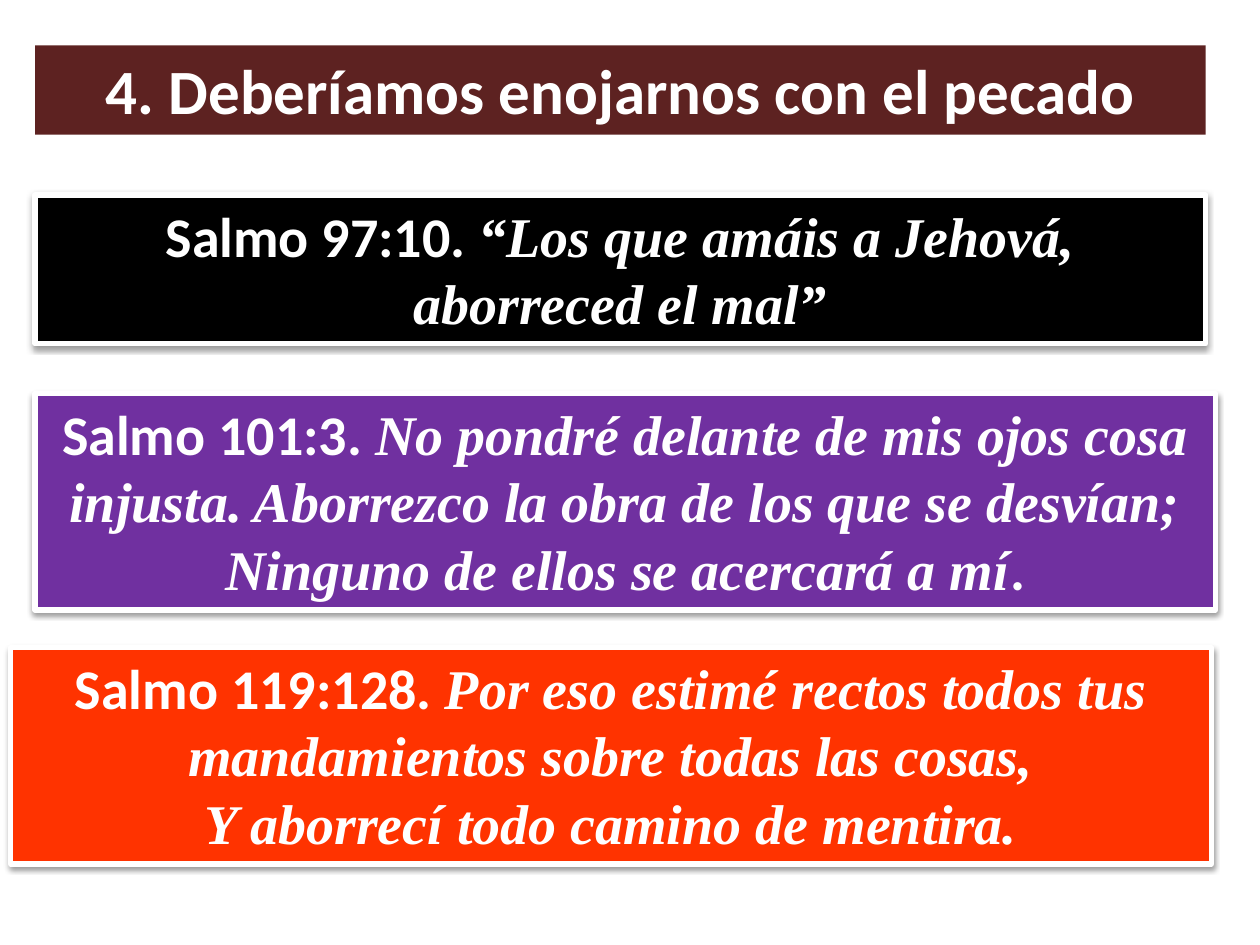
from dataclasses import dataclass

from lxml import etree
from pptx import Presentation
from pptx.dml.color import RGBColor
from pptx.enum import shapes, text
from pptx.oxml import ns
from pptx.util import Pt


@dataclass(frozen=True)
class Theme:
    white: str = "FFFFFF"
    black: str = "000000"
    maroon: str = "5D2221"
    purple: str = "7030A0"
    orange: str = "FF3300"
    label_font: str = "Calibri"
    verse_font: str = "Times New Roman"
    title_size: int = 36
    verse_size: int = 32
    border: int = 3


THEME = Theme()


def add_text(p, content, font=THEME.label_font, size=THEME.verse_size,
             color=THEME.white, bold=True, italic=False):
    r = p.add_run()
    r.text = content
    r.font.name = font
    r.font.size = Pt(size)
    r.font.bold = bold
    r.font.italic = italic
    r.font.color.rgb = RGBColor.from_string(color)


def add_shadow(sp):
    """Give the shape a soft shadow that falls straight down."""
    effects = sp.element.spPr.find(ns.qn("a:effectLst"))
    shadow = etree.SubElement(
        effects, ns.qn("a:outerShdw"), blurRad=str(Pt(3.1)), dist=str(Pt(1.6)),
        dir=str(90 * 60000), rotWithShape="0")
    color = etree.SubElement(shadow, ns.qn("a:srgbClr"), val=THEME.black)
    etree.SubElement(color, ns.qn("a:alpha"), val="38000")


def add_box(slide, left, top, width, height, fill):
    """Add a plain filled rectangle and return it."""
    sp = slide.shapes.add_shape(
        shapes.MSO_SHAPE.RECTANGLE, Pt(left), Pt(top), Pt(width), Pt(height))
    sp.shadow.inherit = False
    sp.fill.solid()
    sp.fill.fore_color.rgb = RGBColor.from_string(fill)
    sp.line.fill.background()
    tf = sp.text_frame
    tf.word_wrap = True
    tf.auto_size = text.MSO_AUTO_SIZE.SHAPE_TO_FIT_TEXT
    tf.vertical_anchor = text.MSO_ANCHOR.TOP
    tf.paragraphs[0].alignment = text.PP_ALIGN.CENTER
    return sp


def add_title(slide, content):
    sp = add_box(slide, 20, 26, 669, 51, THEME.maroon)
    add_text(sp.text_frame.paragraphs[0], content, size=THEME.title_size)


def add_verse(slide, bounds, fill, reference, lines, ending=""):
    """Add a framed verse: upright reference, italic lines, upright ending."""
    sp = add_box(slide, *bounds, fill)
    sp.line.color.rgb = RGBColor.from_string(THEME.white)
    sp.line.width = Pt(THEME.border)
    add_shadow(sp)
    tf = sp.text_frame
    p = tf.paragraphs[0]
    add_text(p, f"{reference} ")
    for i, line in enumerate(lines):
        if i:
            p = tf.add_paragraph()
            p.alignment = text.PP_ALIGN.CENTER
        add_text(p, line, font=THEME.verse_font, italic=True)
    if ending:
        add_text(p, ending)


def main():
    prs = Presentation()
    prs.slide_width, prs.slide_height = Pt(720), Pt(540)
    slide = prs.slides.add_slide(prs.slide_layouts[6])

    add_title(slide, "4. Deberíamos enojarnos con el pecado")
    add_verse(slide, (20, 111.5, 669, 85), THEME.black, "Salmo 97:10.",
              ["“Los que amáis a Jehová, aborreced el mal”"])
    add_verse(slide, (20, 224.8, 674.5, 123.8), THEME.purple, "Salmo 101:3.",
              ["No pondré delante de mis ojos cosa injusta. "
               "Aborrezco la obra de los que se desvían;",
               "Ninguno de ellos se acercará a mí"], ending=".")
    add_verse(slide, (6.2, 370, 686, 123.8), THEME.orange, "Salmo 119:128.",
              ["Por eso estimé rectos todos tus mandamientos "
               "sobre todas las cosas,",
               "Y aborrecí todo camino de mentira."])

    prs.save("out.pptx")


if __name__ == "__main__":
    main()
